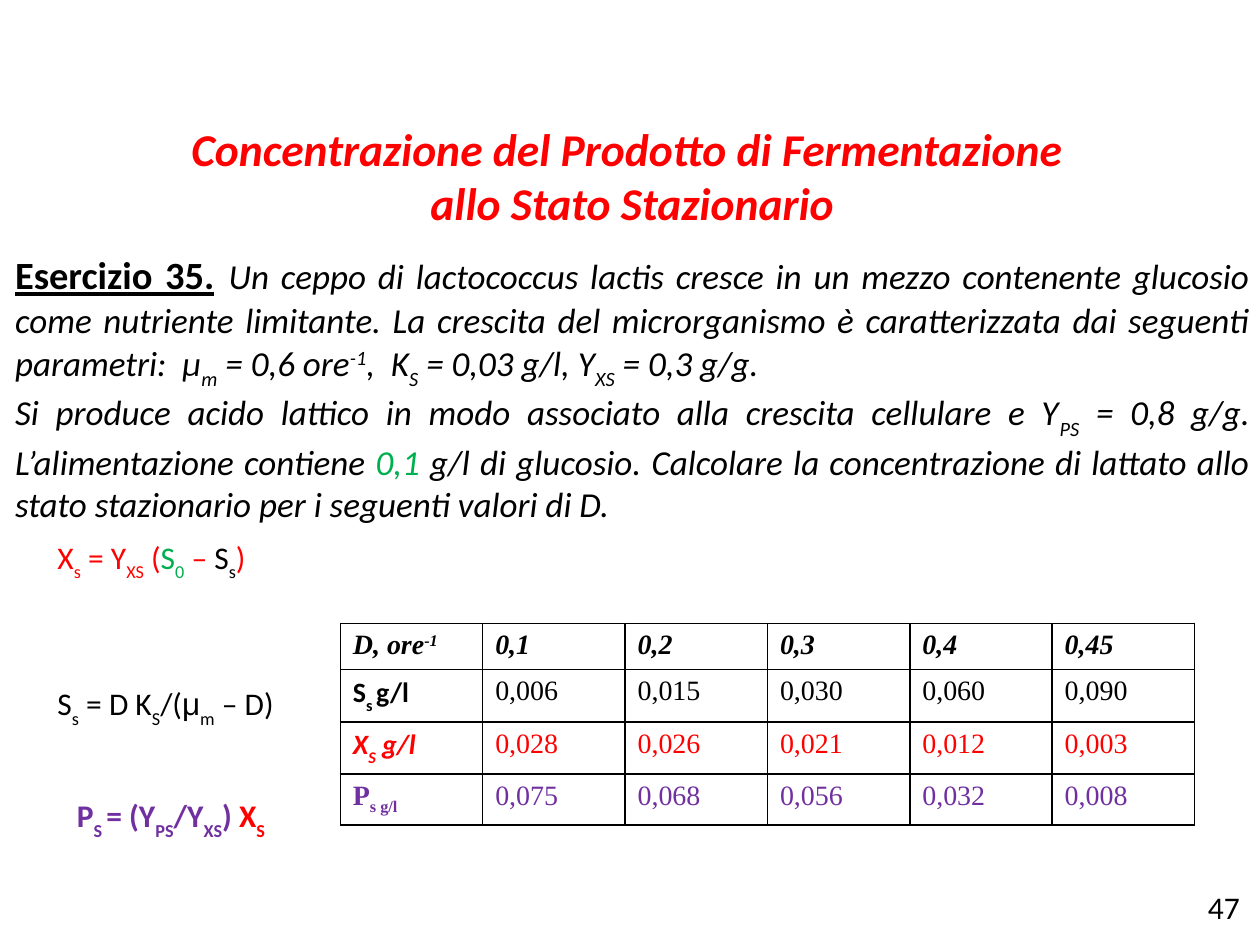
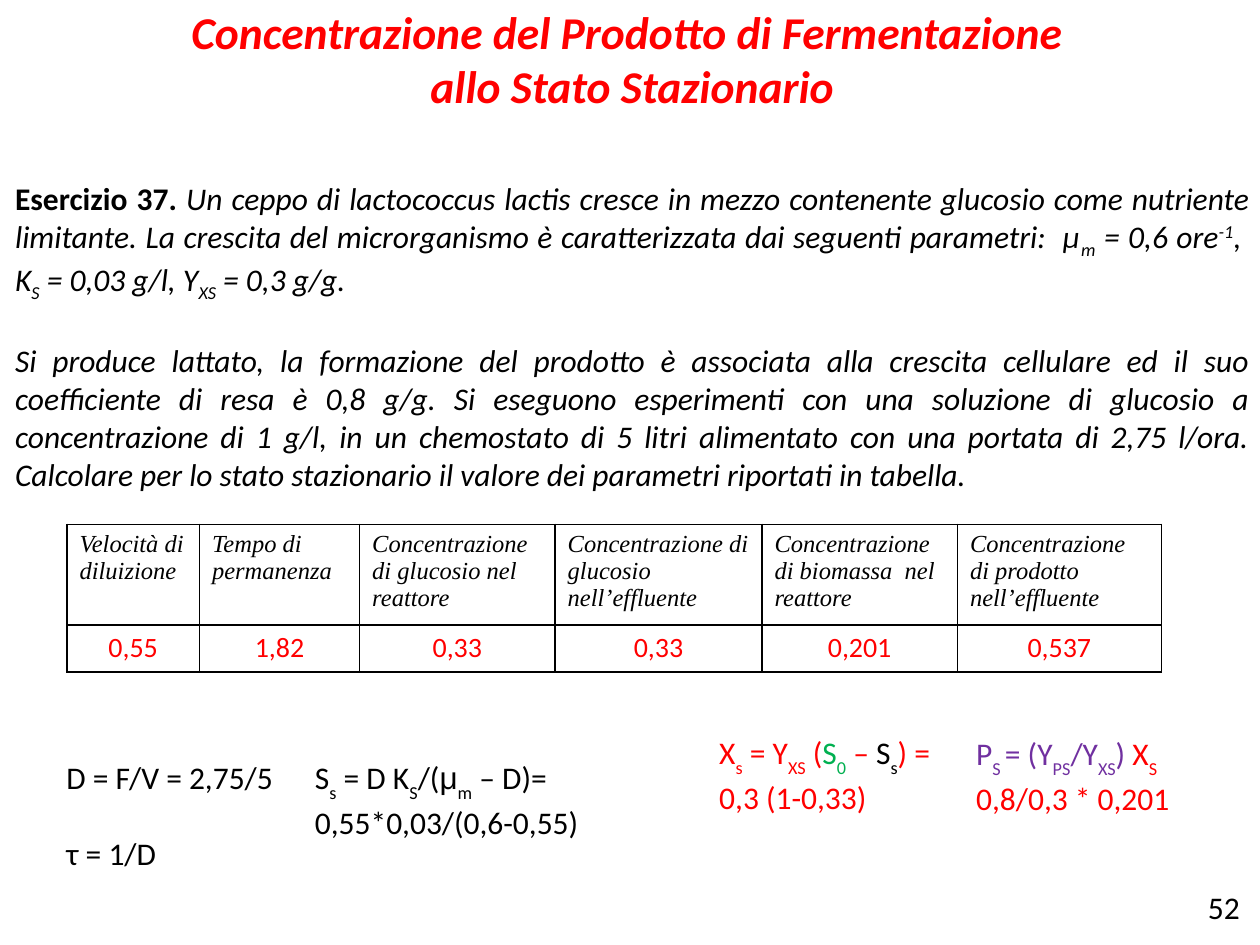
from lxml import etree
from pptx import Presentation
from pptx.dml.color import RGBColor
from pptx.enum.text import MSO_ANCHOR, MSO_AUTO_SIZE, PP_ALIGN
from pptx.oxml.ns import qn
from pptx.util import Cm, Pt

LEFT, CENTER, JUSTIFY = PP_ALIGN.LEFT, PP_ALIGN.CENTER, PP_ALIGN.JUSTIFY
TOP, NO_AUTOFIT = MSO_ANCHOR.TOP, MSO_AUTO_SIZE.NONE
BLACK, RED, GREEN, PURPLE = "000000", "FF0000", "00B050", "7030A0"
CALIBRI, TIMES, ARIAL = "Calibri", "Times New Roman", "Arial"
BASELINES = {"_": "-30000", "~": "-25000", "^": "30000"}
BORDERS = ["a:lnL", "a:lnR", "a:lnT", "a:lnB"]
LAYOUT_TITLE_CONTENT = 1

PLAIN = {"name": CALIBRI, "size": 18, "color": BLACK, "bold": False, "italic": False}
TITLE = {**PLAIN, "size": 26, "color": RED, "bold": True, "italic": True}
BODY = {**PLAIN, "italic": True}
SERIF = {**PLAIN, "name": TIMES, "size": 16}
STRONG = {"bold": True, "italic": False}
LABEL = {"name": CALIBRI, "bold": True}


def write_lines(frame, lines, format_values, alignment=LEFT, gap=0):
    # "|" separates runs; a leading key of BASELINES raises or lowers the run
    for index, line in enumerate(lines):
        paragraph = frame.add_paragraph() if index else frame.paragraphs[0]
        paragraph.alignment = alignment
        paragraph.space_before = Pt(gap if index else 0)
        for piece in line:
            text, changes = piece if isinstance(piece, tuple) else (piece, {})
            values = {**format_values, **changes}
            for part in text.split("|"):
                baseline = BASELINES.get(part[:1])
                run = paragraph.add_run()
                run.text = part[1:] if baseline else part
                for attribute, value in values.items():
                    if attribute == "color":
                        run.font.color.rgb = RGBColor.from_string(value)
                    else:
                        setattr(run.font, attribute, Pt(value) if attribute == "size" else value)
                if baseline:
                    run.font._element.set("baseline", baseline)


title_lines = [["Concentrazione del Prodotto di Fermentazione "], ["allo Stato Stazionario"]]
biomass = ["X|_s| = Y|_XS| (", ("S|_0", {"color": GREEN}), " – ", ("S|_s", {"color": BLACK})]
substrate = ["S|_s| = D K|_S|/(", ("μ", {"name": ARIAL}), "_m"]
product = ["P|_S |= (Y|_PS|/Y|_XS|) ", ("X|_S", {"color": RED})]

exercises = [
    {
        "number": "47",
        "title_top": 2.31,
        "body": (4.8, 6),
        "body_format": {**BODY, "size": 20},
        "body_gap": 0,
        "body_lines": [
            [
                ("Esercizio 35.", {**STRONG, "size": 22, "underline": True}),
                (" ", {"size": 26}),
                "Un ceppo di lactococcus lactis cresce in un mezzo contenente glucosio come "
                "nutriente limitante. La crescita del microrganismo è caratterizzata dai seguenti "
                "parametri:  µ|_m| = 0,6 ore|^-1|,  K|_S| = 0,03 g/l, Y|_XS| = 0,3 g/g. ",
            ],
            [
                "Si produce acido lattico in modo associato alla crescita cellulare e Y|_PS| = 0,8 g/g. "
                "L’alimentazione contiene ",
                ("0,1", {"color": GREEN}),
                " g/l di glucosio. Calcolare la concentrazione di lattato allo stato stazionario "
                "per i seguenti valori di D.",
            ],
        ],
        "table_corner": (6.86, 12.57),
        "columns": [2.87] * 6,
        "rows": [
            (0.93, {**SERIF, "bold": True, "italic": True}, LEFT,
             ["D, ore|^-1", "0,1", "0,2", "0,3", "0,4", "0,45"]),
            (1.05, SERIF, LEFT,
             [("S|_s |g/l", LABEL), "0,006", "0,015", "0,030", "0,060", "0,090"]),
            (1.05, {**SERIF, "color": RED}, LEFT,
             [("X|_S| g/l", {**LABEL, "italic": True}), "0,028", "0,026", "0,021", "0,012", "0,003"]),
            (1.03, {**SERIF, "color": PURPLE}, LEFT,
             [("P|~s g/l", {"bold": True}), "0,075", "0,068", "0,056", "0,032", "0,008"]),
        ],
        "formulas": [
            ((0.91, 10.72, 12.9, 1.02), {"color": RED}, 0, [biomass + [")"]]),
            ((0.91, 13.67, 5.8, 1.02), {}, 0, [substrate + [" – D)"]]),
            ((1.3, 15.93, 4.88, 1.02), {"color": PURPLE, "bold": True}, 0, [product]),
        ],
    },
    {
        "number": "52",
        "title_top": -0.05,
        "body": (3.48, 6.6),
        "body_format": BODY,
        "body_gap": 22,
        "body_lines": [
            [
                ("Esercizio 37.", STRONG),
                " Un ceppo di lactococcus lactis cresce in mezzo contenente glucosio come nutriente "
                "limitante. La crescita del microrganismo è caratterizzata dai seguenti parametri:  "
                "μ|~m| = 0,6 ore|^-1|,  K|~S| = 0,03 g/l, Y|~XS| = 0,3 g/g. ",
            ],
            [
                "Si produce lattato, la formazione del prodotto è associata alla crescita cellulare ed "
                "il suo coefficiente di resa è 0,8 g/g. Si eseguono esperimenti con una soluzione di "
                "glucosio a concentrazione di 1 g/l, in un chemostato di 5 litri alimentato con una "
                "portata di 2,75 l/ora. Calcolare per lo stato stazionario il valore dei parametri "
                "riportati in tabella."
            ],
        ],
        "table_corner": (1.35, 10.57),
        "columns": [2.67, 3.23, 3.94, 4.17, 3.94, 4.11],
        "rows": [
            (2.03, {**SERIF, "size": 14, "italic": True}, LEFT,
             ["Velocità di diluizione", "Tempo di permanenza",
              "Concentrazione di glucosio nel reattore", "Concentrazione di glucosio nell’effluente",
              "Concentrazione di biomassa  nel reattore", "Concentrazione di prodotto nell’effluente"]),
            (0.93, {**PLAIN, "size": 16, "color": RED}, CENTER,
             ["0,55", "1,82", "0,33", "0,33", "0,201", "0,537"]),
        ],
        "formulas": [
            ((1.09, 15.16, 4.9, 2.57), {}, 22, [["D = F/V = 2,75/5"], ["τ = 1/D"]]),
            ((6.1, 15.16, 6.65, 1.8), {}, 0, [substrate + [" – D)="], ["0,55*0,03/(0,6-0,55)"]]),
            ((14.25, 14.66, 5.05, 1.8), {"color": RED}, 0, [biomass + [") ="], ["0,3 (1-0,33)"]]),
            ((19.43, 14.68, 5.33, 1.8), {"color": PURPLE}, 0,
             [product, [("0,8/0,3 * 0,201", {"color": RED})]]),
        ],
    },
]

presentation = Presentation()
presentation.slide_width, presentation.slide_height = Cm(25.4), Cm(19.05)

for exercise in exercises:
    slide = presentation.slides.add_slide(presentation.slide_layouts[LAYOUT_TITLE_CONTENT])
    title, body = slide.shapes.title, slide.placeholders[1]
    body_top, body_height = exercise["body"]
    for shape, top, height in [(title, exercise["title_top"], 2.5), (body, body_top, body_height)]:
        shape.left, shape.top, shape.width, shape.height = Cm(0.05), Cm(top), Cm(25.4), Cm(height)
        shape.text_frame.auto_size = NO_AUTOFIT
        shape.text_frame.vertical_anchor = TOP
    write_lines(title.text_frame, title_lines, TITLE, CENTER)
    write_lines(body.text_frame, exercise["body_lines"], exercise["body_format"],
                JUSTIFY, exercise["body_gap"])
    for paragraph in body.text_frame.paragraphs:
        properties = paragraph._p.get_or_add_pPr()
        properties.set("marL", "0")
        properties.set("indent", "0")
        etree.SubElement(properties, qn("a:buNone"))

    columns, rows = exercise["columns"], exercise["rows"]
    left, top = exercise["table_corner"]
    table = slide.shapes.add_table(len(rows), len(columns), Cm(left), Cm(top), Cm(sum(columns)),
                                   Cm(sum(row[0] for row in rows))).table
    table.first_row = table.horz_banding = False
    for column, width in zip(table.columns, columns):
        column.width = Cm(width)
    for row, (height, format_values, alignment, entries) in zip(table.rows, rows):
        row.height = Cm(height)
        for cell, entry in zip(row.cells, entries):
            write_lines(cell.text_frame, [[entry]], format_values, alignment)
            cell.fill.background()
            for position, border in enumerate(BORDERS):
                line = etree.Element(qn(border), w=str(Pt(1)))
                fill = etree.SubElement(line, qn("a:solidFill"))
                etree.SubElement(fill, qn("a:srgbClr"), val=BLACK)
                cell._tc.get_or_add_tcPr().insert(position, line)

    page_number = ((24.1, 17.78, 1.35, 1.27), {}, 0, [[exercise["number"]]])
    for box, changes, gap, lines in exercise["formulas"] + [page_number]:
        frame = slide.shapes.add_textbox(*[Cm(length) for length in box]).text_frame
        frame.word_wrap = True
        write_lines(frame, lines, {**PLAIN, **changes}, gap=gap)

presentation.save("out.pptx")
